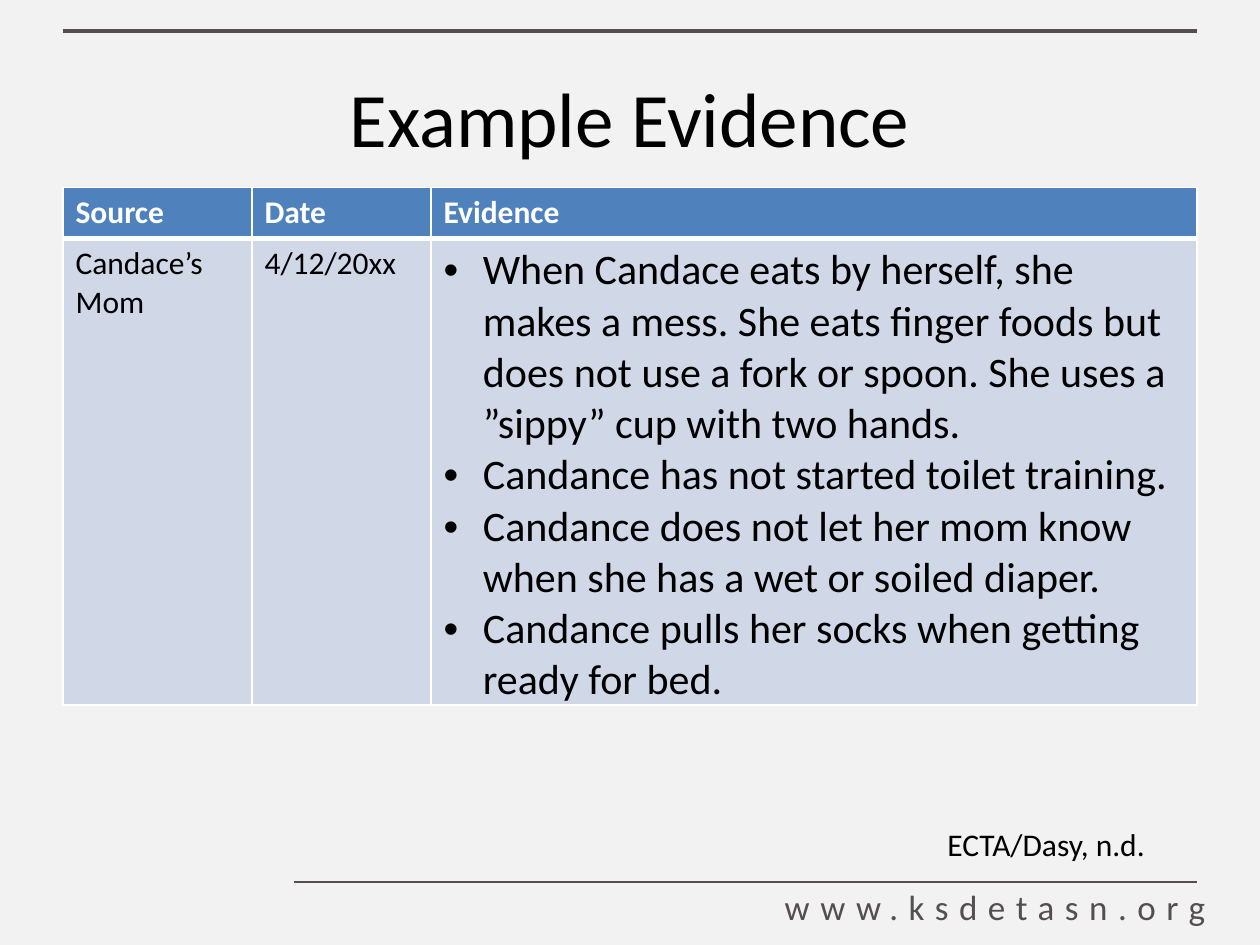
from lxml.etree import SubElement
from pptx import Presentation
from pptx.dml.color import RGBColor
from pptx.enum.shapes import MSO_CONNECTOR
from pptx.enum.text import MSO_ANCHOR, PP_ALIGN
from pptx.oxml.ns import qn
from pptx.util import Cm, Pt

COLORS = {
    "background": "F2F2F2",
    "rule": "554E50",
    "text": "000000",
    "header": "4F81BD",
    "body": "D0D8E8",
    "white": "FFFFFF",
}
FONT = "Calibri"
MARGIN, CONTENT_WIDTH = 1.27, 22.86
COLUMN_WIDTHS = [3.81, 3.61, 15.44]
ROW_HEIGHTS = [1.03, 9.4]
BULLET_INDENT = 0.79

HEADINGS = ["Source", "Date", "Evidence"]
EVIDENCE = [
    "When Candace eats by herself, she makes a mess. She eats finger foods but "
    "does not use a fork or spoon. She uses a ”sippy” cup with two hands.",
    "Candance has not started toilet training.",
    "Candance does not let her mom know when she has a wet or soiled diaper.",
    "Candance pulls her socks when getting ready for bed.",
]


def color(name):
    return RGBColor.from_string(COLORS[name])


def write(frame, text, size=18, ink="text", bold=False, align=None,
          bullet=False, spacing=None):
    """Fill a text frame with one paragraph per string."""
    lines = [text] if isinstance(text, str) else text
    for index, line in enumerate(lines):
        paragraph = frame.add_paragraph() if index else frame.paragraphs[0]
        if align is not None:
            paragraph.alignment = align
        if bullet:
            properties = paragraph._p.get_or_add_pPr()
            properties.set("marL", str(Cm(BULLET_INDENT)))
            properties.set("indent", str(-Cm(BULLET_INDENT)))
            SubElement(properties, qn("a:buFont"), typeface="Arial")
            SubElement(properties, qn("a:buChar"), char="•")
        run = paragraph.add_run()
        run.text = line
        run.font.name = FONT
        run.font.size = Pt(size)
        run.font.bold = bold
        run.font.color.rgb = color(ink)
        if spacing:
            run._r.get_or_add_rPr().set("spc", str(spacing * 100))


def add_text(slide, box, text, wrap=False, anchor=MSO_ANCHOR.TOP, **style):
    frame = slide.shapes.add_textbox(*map(Cm, box)).text_frame
    frame.word_wrap = wrap
    frame.vertical_anchor = anchor
    write(frame, text, **style)


def add_rule(slide, left, right, top, weight):
    rule = slide.shapes.add_connector(
        MSO_CONNECTOR.STRAIGHT, Cm(left), Cm(top), Cm(right), Cm(top))
    rule.line.color.rgb = color("rule")
    rule.line.width = Pt(weight)
    SubElement(rule._element.spPr, qn("a:effectLst"))


def style_cell(cell, fill, top=1, bottom=1):
    properties = cell._tc.get_or_add_tcPr()
    # Borders come before the fill in the cell properties
    for side, weight in (("L", 1), ("R", 1), ("T", top), ("B", bottom)):
        border = SubElement(properties, qn(f"a:ln{side}"), w=str(Pt(weight)))
        solid = SubElement(border, qn("a:solidFill"))
        SubElement(solid, qn("a:srgbClr"), val=COLORS["white"])
    cell.fill.solid()
    cell.fill.fore_color.rgb = color(fill)


def add_header(slide, left, top, width, height):
    add_rule(slide, left, left + width, top, 2.25)
    add_text(slide, (left, top + 0.13, width, height), "Example Evidence",
             wrap=True, anchor=MSO_ANCHOR.MIDDLE, size=44, align=PP_ALIGN.CENTER)


def add_evidence_table(slide, left, top):
    table = slide.shapes.add_table(
        len(ROW_HEIGHTS), len(COLUMN_WIDTHS), Cm(left), Cm(top),
        Cm(sum(COLUMN_WIDTHS)), Cm(sum(ROW_HEIGHTS))).table
    for column, width in zip(table.columns, COLUMN_WIDTHS):
        column.width = Cm(width)
    for row, height in zip(table.rows, ROW_HEIGHTS):
        row.height = Cm(height)

    # Heading row, with a heavier line below it
    for cell, heading in zip(table.rows[0].cells, HEADINGS):
        style_cell(cell, "header", bottom=3)
        write(cell.text_frame, heading, ink="white", bold=True)

    # Evidence row
    source, date, evidence = table.rows[1].cells
    for cell in (source, date, evidence):
        style_cell(cell, "body", top=3)
    write(source.text_frame, "Candace’s Mom")
    write(date.text_frame, "4/12/20xx")
    write(evidence.text_frame, EVIDENCE, size=24, bullet=True)


def add_footer(slide, left, top, width):
    right = left + width
    add_text(slide, (right - 5.28, top - 1.27, 4.52, 1.02), "ECTA/Dasy, n.d.")
    add_rule(slide, left, right, top, 0.75)
    add_text(slide, (right - 8.56, top - 0.05, 9.27, 1.12), "www.ksdetasn.org",
             size=20, ink="rule", spacing=6)


def main():
    presentation = Presentation()
    presentation.slide_width, presentation.slide_height = Cm(25.4), Cm(19.05)
    slide = presentation.slides.add_slide(presentation.slide_layouts[6])
    slide.background.fill.solid()
    slide.background.fill.fore_color.rgb = color("background")

    add_header(slide, MARGIN, 0.63, CONTENT_WIDTH, 3.18)
    add_evidence_table(slide, MARGIN, 3.78)
    add_footer(slide, 5.92, 17.78, 18.21)
    presentation.save("out.pptx")


if __name__ == "__main__":
    main()
